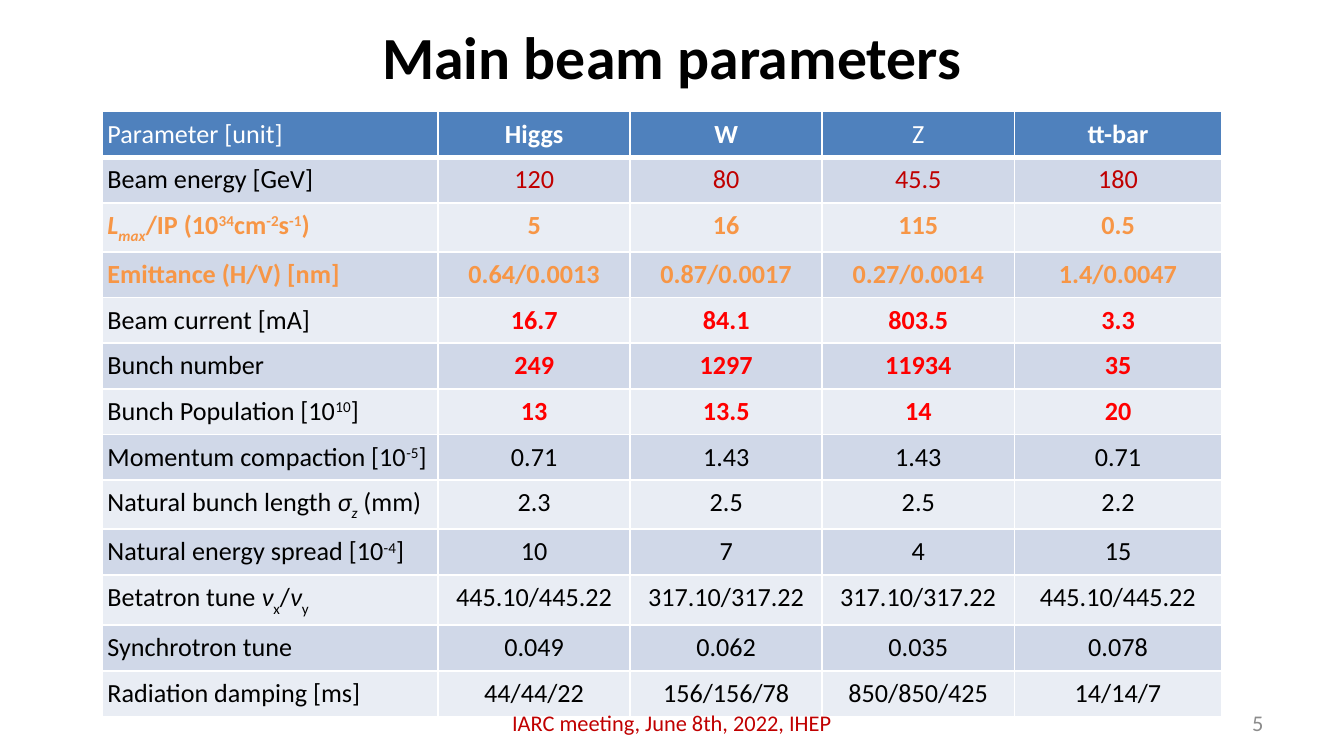
from lxml.etree import SubElement as Sub
from pptx import Presentation
from pptx.dml.color import RGBColor as RGB
from pptx.enum.text import MSO_ANCHOR as Anchor, PP_ALIGN as Align
from pptx.oxml.ns import qn
from pptx.util import Cm, Pt

FONT = "Calibri"
BLACK, WHITE = RGB(0, 0, 0), RGB(255, 255, 255)
CRIMSON, RED = RGB(0xC0, 0, 0), RGB(255, 0, 0)
ORANGE, GRAY = RGB(0xF7, 0x96, 0x46), RGB(0x8C, 0x8C, 0x8C)
HEAD = RGB(0x4F, 0x81, 0xBD)
BANDS = RGB(0xE9, 0xED, 0xF4), RGB(0xD0, 0xD8, 0xE8)

# Label parts: text, baseline shift in percent, italic
LUMI = [("L", 0, True), ("max", -25, True), ("/IP (10",), ("34", 30), ("cm",),
        ("-2", 30), ("s",), ("-1", 30), (")",)]
LENGTH = [("Natural bunch length ",), ("σ", 0, True), ("z", -25, True), (" (mm)",)]
TUNE = [("Betatron tune ",), ("ν", 0, True), ("x", -30), ("/",),
        ("ν", 0, True), ("y", -30)]


def power(name, exp):
    return [(name + " [10",), (exp, 30), ("]",)]


# Rows: label parts, label colour, value colour, bold values, values
ROWS = [
    ([("Beam energy [GeV]",)], BLACK, CRIMSON, False, "120 80 45.5 180"),
    (LUMI, ORANGE, ORANGE, True, "5 16 115 0.5"),
    ([("Emittance (H/V) [nm]",)], ORANGE, ORANGE, True,
     "0.64/0.0013 0.87/0.0017 0.27/0.0014 1.4/0.0047"),
    ([("Beam current [mA]",)], BLACK, RED, True, "16.7 84.1 803.5 3.3"),
    ([("Bunch number",)], BLACK, RED, True, "249 1297 11934 35"),
    (power("Bunch Population", "10"), BLACK, RED, True, "13 13.5 14 20"),
    (power("Momentum compaction", "-5"), BLACK, BLACK, False, "0.71 1.43 1.43 0.71"),
    (LENGTH, BLACK, BLACK, False, "2.3 2.5 2.5 2.2"),
    (power("Natural energy spread", "-4"), BLACK, BLACK, False, "10 7 4 15"),
    (TUNE, BLACK, BLACK, False,
     "445.10/445.22 317.10/317.22 317.10/317.22 445.10/445.22"),
    ([("Synchrotron tune",)], BLACK, BLACK, False, "0.049 0.062 0.035 0.078"),
    ([("Radiation damping [ms]",)], BLACK, BLACK, False,
     "44/44/22 156/156/78 850/850/425 14/14/7"),
]


def add_run(para, text, size, color, bold=False, base=0, italic=False):
    run = para.add_run()
    run.text = text
    font = run.font
    font.name, font.size, font.bold, font.italic = FONT, Pt(size), bold, italic
    font.color.rgb = color
    if base:
        run._r.get_or_add_rPr().set("baseline", str(base * 1000))


def add_title(slide, text):
    title = slide.shapes.title
    title.left, title.top, title.width, title.height = Cm(1.27), Cm(0.16), Cm(22.86), Cm(1.78)
    frame = title.text_frame
    frame.vertical_anchor = Anchor.MIDDLE
    para = frame.paragraphs[0]
    para.alignment = Align.CENTER
    add_run(para, text, 32, BLACK, True)


def add_note(slide, text, left, width, align, color):
    box = slide.shapes.add_textbox(Cm(left), Cm(13.28), Cm(width), Cm(0.76))
    frame = box.text_frame
    frame.word_wrap = True
    frame.vertical_anchor = Anchor.MIDDLE
    para = frame.paragraphs[0]
    para.alignment = align
    add_run(para, text, 12, color)


def add_edges(cell, low):
    props = cell._tc.get_or_add_tcPr()
    for side, width in (("L", 1), ("R", 1), ("T", 1), ("B", low)):
        line = Sub(props, qn("a:ln" + side), w=str(Pt(width)))
        Sub(Sub(line, qn("a:solidFill")), qn("a:srgbClr"), val=str(WHITE))


def fill_cell(cell, parts, align, color, bold, fill, low=1):
    cell.margin_left = cell.margin_right = Cm(0.1)
    cell.margin_top = cell.margin_bottom = Cm(0.13)
    add_edges(cell, low)
    cell.fill.solid()
    cell.fill.fore_color.rgb = fill
    para = cell.text_frame.paragraphs[0]
    para.alignment = align
    for text, *shift in parts:
        add_run(para, text, 14, color, bold, *shift)


def add_grid(slide):
    widths = (6.35, 3.63, 3.63, 3.63, 3.92)
    count = len(ROWS) + 1
    grid = slide.shapes.add_table(count, len(widths), Cm(1.93), Cm(2.11),
                                  Cm(sum(widths)), Cm(0.84 * count)).table
    for col, width in zip(grid.columns, widths):
        col.width = Cm(width)

    # Header row
    names = ("Parameter [unit]", "Higgs", "W", "Z", "tt-bar")
    for c, name in enumerate(names):
        fill_cell(grid.cell(0, c), [(name,)], Align.CENTER if c else Align.LEFT,
                  WHITE, name not in ("Parameter [unit]", "Z"), HEAD, 3)

    # Parameter rows in alternating bands
    for r, (label, tint, color, bold, values) in enumerate(ROWS, 1):
        band = BANDS[r % 2]
        fill_cell(grid.cell(r, 0), label, Align.LEFT, tint, tint == ORANGE, band)
        for c, value in enumerate(values.split(), 1):
            fill_cell(grid.cell(r, c), [(value,)], Align.CENTER, color, bold, band)


def main():
    deck = Presentation()
    deck.slide_width, deck.slide_height = Cm(25.4), Cm(14.29)
    slide = deck.slides.add_slide(deck.slide_layouts[5])
    add_title(slide, "Main beam parameters")
    add_grid(slide)
    # Footer and page number stay in front of the table
    add_note(slide, "IARC meeting, June 8th, 2022, IHEP", 8.68, 8.04, Align.CENTER, CRIMSON)
    add_note(slide, "5", 18.2, 5.93, Align.RIGHT, GRAY)
    deck.save("out.pptx")


if __name__ == "__main__":
    main()
